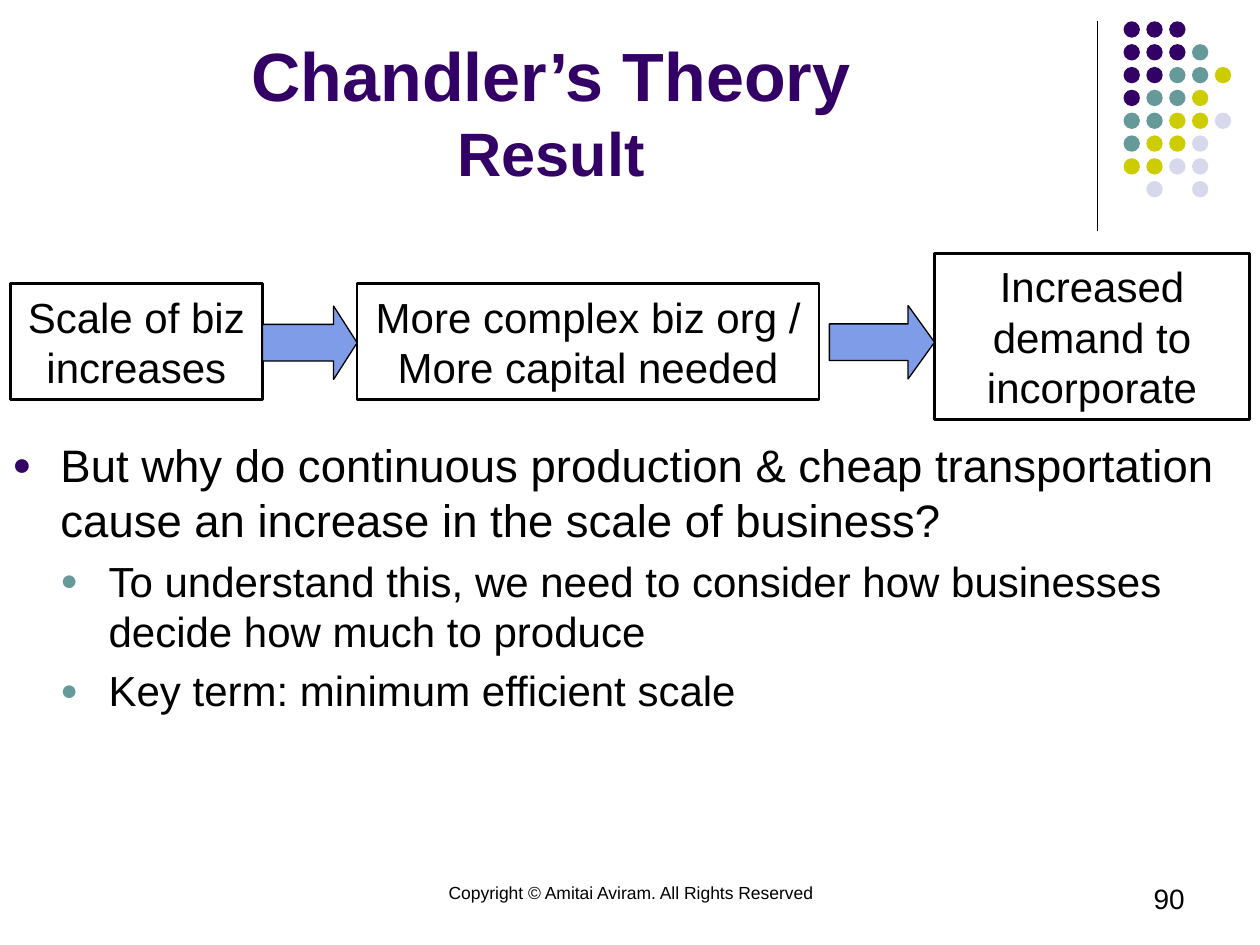
from typing import NamedTuple

from lxml.etree import SubElement
from pptx import Presentation
from pptx.dml.color import RGBColor
from pptx.enum.shapes import MSO_CONNECTOR, MSO_SHAPE
from pptx.enum.text import MSO_ANCHOR as Anchor, PP_ALIGN as Align
from pptx.oxml.ns import qn
from pptx.util import Cm, Pt

BLACK, PURPLE, TEAL = "000000", "330066", "669999"
DOT_COLOURS = {"P": PURPLE, "T": TEAL, "Y": "CCCC00", "L": "D8D8EC"}
DOT_ROWS = ["PPP", "PPPT", "PPTTY", "PTTY", "TTYYL", "TYYL", "YYLL", " L L"]
DOT_LEFT, DOT_TOP, DOT_PITCH, DOT_SIZE = 22.65, 0.43, 0.46, 0.33


class Area(NamedTuple):
    """Left, top, width and height in centimetres."""
    left: float
    top: float
    width: float
    height: float

    def lengths(self) -> list:
        return [Cm(value) for value in self]


class Step(NamedTuple):
    text: str
    area: Area


class Arrow(NamedTuple):
    area: Area
    head: float


class Point(NamedTuple):
    text: str
    size: int
    level: int
    bullet_colour: str


STEPS = [
    Step("Scale of biz increases", Area(0.21, 5.72, 5.08, 2.33)),
    Step("More complex biz org / More capital needed", Area(7.2, 5.72, 9.31, 2.33)),
    Step("Increased demand to incorporate", Area(18.84, 5.11, 6.35, 3.35)),
]
ARROWS = [
    Arrow(Area(5.29, 6.17, 1.91, 1.48), 0.32),
    Arrow(Area(16.72, 6.16, 2.12, 1.48), 0.36),
]
POINTS = [
    Point("But why do continuous production & cheap transportation cause "
          "an increase in the scale of business?", 26, 0, PURPLE),
    Point("To understand this, we need to consider how businesses decide "
          "how much to produce", 24, 1, TEAL),
    Point("Key term: minimum efficient scale", 24, 1, TEAL),
]


def rgb(colour: str) -> RGBColor:
    return RGBColor.from_string(colour)


def write(paragraph, text: str, *, size: int, colour: str = BLACK,
          bold: bool = False, align=Align.LEFT) -> None:
    paragraph.alignment = align
    run = paragraph.add_run()
    run.text = text
    run.font.name = "Arial"
    run.font.size = Pt(size)
    run.font.bold = bold
    run.font.color.rgb = rgb(colour)


def add_box(slide, area: Area):
    frame = slide.shapes.add_textbox(*area.lengths()).text_frame
    frame.word_wrap = True
    return frame


def add_shape(slide, kind, area: Area, fill: str = "", line_width: float = 0):
    shape = slide.shapes.add_shape(kind, *area.lengths())
    shape.shadow.inherit = False
    if fill:
        shape.fill.solid()
        shape.fill.fore_color.rgb = rgb(fill)
    else:
        shape.fill.background()
    if line_width:
        shape.line.color.rgb = rgb(BLACK)
        shape.line.width = Pt(line_width)
    else:
        shape.line.fill.background()
    return shape


def add_decoration(slide) -> None:
    rule = slide.shapes.add_connector(
        MSO_CONNECTOR.STRAIGHT, Cm(22.12), Cm(0.43), Cm(22.12), Cm(4.65))
    rule.line.color.rgb = rgb(BLACK)
    rule.line.width = Pt(0.75)
    SubElement(rule.element.spPr, qn("a:effectLst"))
    for row, codes in enumerate(DOT_ROWS):
        for column, code in enumerate(codes):
            if code in DOT_COLOURS:
                area = Area(DOT_LEFT + column * DOT_PITCH,
                            DOT_TOP + row * DOT_PITCH, DOT_SIZE, DOT_SIZE)
                add_shape(slide, MSO_SHAPE.OVAL, area, DOT_COLOURS[code])


def add_title(slide) -> None:
    title = slide.shapes.title
    title.left, title.top, title.width, title.height = Area(0, 0.33, 22.22, 3.6).lengths()
    title.text_frame.vertical_anchor = Anchor.BOTTOM
    heading = title.text_frame.paragraphs[0]
    style = dict(colour=PURPLE, bold=True, align=Align.CENTER)
    write(heading, "Chandler’s Theory", size=39, **style)
    heading.add_line_break()
    write(heading, "Result", size=35, **style)


def set_bullet(paragraph, point: Point) -> None:
    props = paragraph._p.get_or_add_pPr()
    props.set("marL", str(Cm(0.97 * (point.level + 1))))
    props.set("indent", str(-Cm(0.97)))
    colour = SubElement(props, qn("a:buClr"))
    SubElement(colour, qn("a:srgbClr"), val=point.bullet_colour)
    SubElement(props, qn("a:buSzPct"), val="70000")
    SubElement(props, qn("a:buFont"), typeface="Arial")
    SubElement(props, qn("a:buChar"), char="●")


def add_points(slide) -> None:
    body = add_box(slide, Area(0, 8.69, 25.4, 9.32))
    for index, point in enumerate(POINTS):
        paragraph = body.add_paragraph() if index else body.paragraphs[0]
        paragraph.level = point.level
        paragraph.space_before = Pt(5)
        write(paragraph, point.text, size=point.size)
        set_bullet(paragraph, point)


def add_flow(slide) -> None:
    for step in STEPS:
        box = add_shape(slide, MSO_SHAPE.RECTANGLE, step.area, line_width=1.5)
        box.text_frame.word_wrap = True
        box.text_frame.vertical_anchor = Anchor.MIDDLE
        write(box.text_frame.paragraphs[0], step.text, size=24, align=Align.CENTER)
    for arrow in ARROWS:
        shape = add_shape(slide, MSO_SHAPE.RIGHT_ARROW, arrow.area, "7E9CE8", 0.75)
        shape.adjustments[0] = 0.5
        shape.adjustments[1] = arrow.head


def main() -> None:
    deck = Presentation()
    deck.slide_width, deck.slide_height = Cm(25.4), Cm(19.05)
    slide = deck.slides.add_slide(deck.slide_layouts[5])
    add_decoration(slide)
    # Footer and slide number
    copyright_line = add_box(slide, Area(8.69, 17.65, 8.05, 1.27))
    write(copyright_line.paragraphs[0], "Copyright © Amitai Aviram. All Rights Reserved",
          size=10, align=Align.CENTER)
    page_number = add_box(slide, Area(18.21, 17.65, 5.92, 1.27))
    write(page_number.paragraphs[0], "90", size=16, align=Align.RIGHT)
    # Main content
    add_title(slide)
    add_points(slide)
    add_flow(slide)
    deck.save("out.pptx")


if __name__ == "__main__":
    main()
